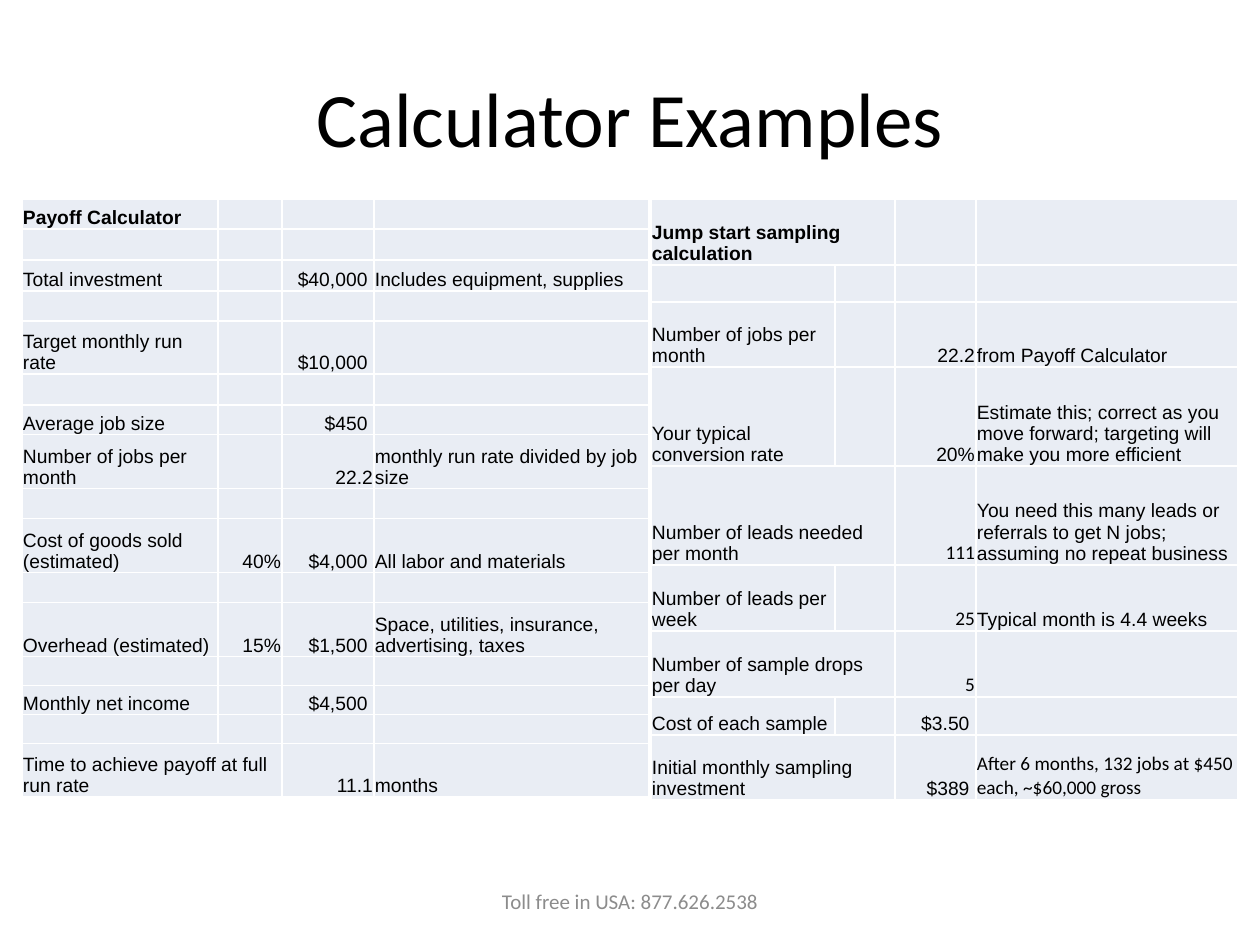
from dataclasses import dataclass
from typing import Optional

from lxml import etree
from pptx import Presentation
from pptx.dml.color import RGBColor
from pptx.enum.text import MSO_ANCHOR, PP_ALIGN
from pptx.oxml.ns import qn
from pptx.util import Emu, Pt

LEFT, CENTER, RIGHT = PP_ALIGN.LEFT, PP_ALIGN.CENTER, PP_ALIGN.RIGHT
MIDDLE, BOTTOM = MSO_ANCHOR.MIDDLE, MSO_ANCHOR.BOTTOM
EMU_PER_PX = 914400 / 126
TITLE_ONLY = 5
COLORS = {"text": "000000", "muted": "8C8C8C", "cell": "E9EDF4", "border": "FFFFFF"}
COLUMN_ALIGNS = (LEFT, RIGHT, RIGHT, LEFT)


@dataclass(frozen=True)
class Row:
    height: int
    label: str = ""
    percent: str = ""
    value: str = ""
    note: str = ""
    bold: bool = False
    wide_label: bool = False
    value_font: str = "Arial"
    note_font: str = "Arial"


@dataclass(frozen=True)
class Calculator:
    left: int
    top: int
    column_widths: tuple[int, ...]
    rows: tuple[Row, ...]


PAYOFF = Calculator(22, 199, (196, 64, 92, 275), (
    Row(30, "Payoff Calculator", bold=True),
    Row(31),
    Row(31, "Total investment", value="$40,000 ", note="Includes equipment, supplies"),
    Row(30),
    Row(53, "Target monthly run rate", value="$10,000 "),
    Row(31),
    Row(30, "Average job size", value="$450 "),
    Row(54, "Number of jobs per month", value="22.2",
        note="monthly run rate divided by job size"),
    Row(30),
    Row(54, "Cost of goods sold (estimated)", "40%", "$4,000 ", "All labor and materials"),
    Row(30),
    Row(54, "Overhead (estimated)", "15%", "$1,500 ",
        "Space, utilities, insurance, advertising, taxes"),
    Row(29),
    Row(29, "Monthly net income", value="$4,500 "),
    Row(29),
    Row(53, "Time to achieve payoff at full run rate", value="11.1", note="months",
        wide_label=True),
))
SAMPLING = Calculator(651, 199, (184, 60, 81, 262), (
    Row(66, "Jump start sampling calculation", bold=True, wide_label=True),
    Row(37),
    Row(65, "Number of jobs per month", value="22.2", note="from Payoff Calculator"),
    Row(99, "Your typical conversion rate", value="20%",
        note="Estimate this; correct as you move forward; targeting will make you more efficient"),
    Row(99, "Number of leads needed per month", value="111", value_font="Calibri",
        note="You need this many leads or referrals to get N jobs; assuming no repeat business",
        wide_label=True),
    Row(66, "Number of leads per week", value="25", value_font="Calibri",
        note="Typical month is 4.4 weeks"),
    Row(66, "Number of sample drops per day", value="5", value_font="Calibri",
        wide_label=True),
    Row(38, "Cost of each sample", value="$3.50 "),
    Row(65, "Initial monthly sampling investment", value="$389 ",
        note="After 6 months, 132 jobs at $450 each, ~$60,000 gross", note_font="Calibri",
        wide_label=True),
))


def px(length: int) -> Emu:
    return Emu(round(length * EMU_PER_PX))


def write_text(frame, text: str, *, size: int, font: str = "Calibri",
               color: str = "text", bold: Optional[bool] = None,
               align: PP_ALIGN = LEFT) -> None:
    """Write one paragraph; an empty one keeps its size so its row stays low."""
    paragraph = frame.paragraphs[0]
    paragraph.alignment = align
    if not text:
        etree.SubElement(paragraph._p, qn("a:endParaRPr"), sz=str(size * 100))
        return
    run = paragraph.add_run()
    run.text = text
    run.font.size = Pt(size)
    run.font.name = font
    run.font.bold = bold
    run.font.color.rgb = RGBColor.from_string(COLORS[color])


def style_cell(cell) -> None:
    cell.vertical_anchor = BOTTOM
    cell.margin_left = cell.margin_right = cell.margin_top = px(1)
    cell.margin_bottom = 0
    properties = cell._tc.get_or_add_tcPr()
    for side in ("lnL", "lnR", "lnT", "lnB"):
        line = etree.SubElement(properties, qn(f"a:{side}"), w=str(Pt(1)))
        fill = etree.SubElement(line, qn("a:solidFill"))
        etree.SubElement(fill, qn("a:srgbClr"), val=COLORS["border"])
    cell.fill.solid()
    cell.fill.fore_color.rgb = RGBColor.from_string(COLORS["cell"])


def add_calculator(slide, calculator: Calculator) -> None:
    widths, rows = calculator.column_widths, calculator.rows
    table = slide.shapes.add_table(
        len(rows), len(widths), px(calculator.left), px(calculator.top),
        px(sum(widths)), px(sum(row.height for row in rows))).table
    table.first_row = table.horz_banding = False
    for column, width in zip(table.columns, widths):
        column.width = px(width)
    for row_index, row in enumerate(rows):
        table.rows[row_index].height = px(row.height)
        if row.wide_label:
            table.cell(row_index, 0).merge(table.cell(row_index, 1))
        texts = (row.label, row.percent, row.value, row.note)
        fonts = ("Arial", "Arial", row.value_font, row.note_font)
        for column_index, (text, font, align) in enumerate(zip(texts, fonts, COLUMN_ALIGNS)):
            cell = table.cell(row_index, column_index)
            style_cell(cell)
            write_text(cell.text_frame, text, size=11, font=font, bold=row.bold, align=align)


def main() -> None:
    presentation = Presentation()
    presentation.slide_width, presentation.slide_height = px(1260), px(945)
    slide = presentation.slides.add_slide(presentation.slide_layouts[TITLE_ONLY])

    title = slide.shapes.title
    title.left, title.top, title.width, title.height = px(63), px(38), px(1134), px(158)
    title.text_frame.vertical_anchor = MIDDLE
    write_text(title.text_frame, "Calculator Examples", size=44, align=CENTER)

    add_calculator(slide, PAYOFF)

    hotline = slide.shapes.add_textbox(px(430), px(876), px(400), px(50)).text_frame
    hotline.word_wrap = True
    hotline.vertical_anchor = MIDDLE
    write_text(hotline, "Toll free in USA: 877.626.2538", size=12, color="muted", align=CENTER)

    add_calculator(slide, SAMPLING)
    presentation.save("out.pptx")


if __name__ == "__main__":
    main()
